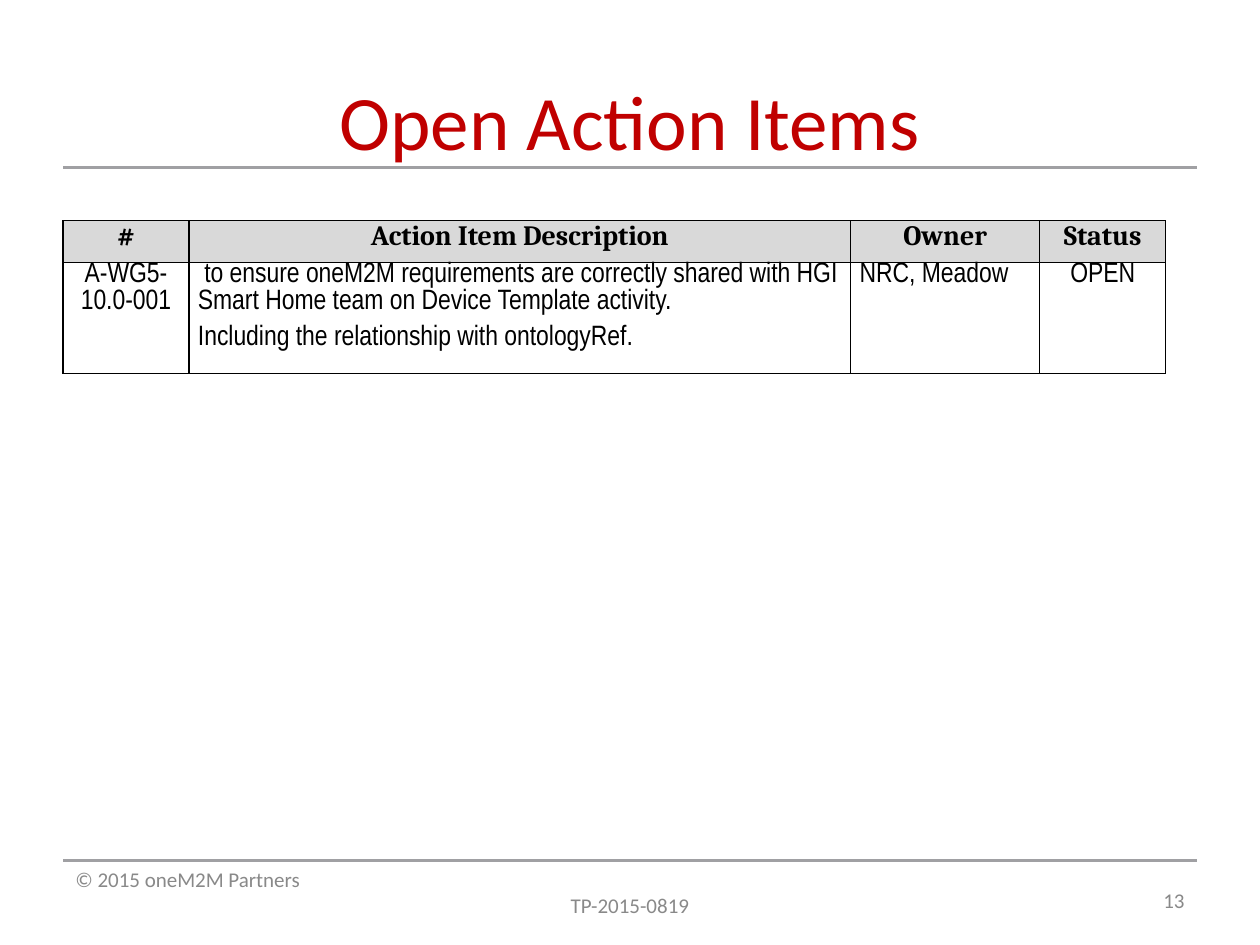
from dataclasses import dataclass

from lxml import etree
from pptx import Presentation
from pptx import util as u
from pptx.dml.color import RGBColor
from pptx.enum import shapes, text
from pptx.oxml import ns

RED = RGBColor(0xC0, 0x00, 0x00)
RULE_GREY = RGBColor(0xA0, 0xA0, 0xA3)
FOOTER_GREY = RGBColor(0x89, 0x89, 0x89)
HEADER_FILL = RGBColor(0xD9, 0xD9, 0xD9)
BLACK = RGBColor(0x00, 0x00, 0x00)

LEFT, CONTENT_WIDTH = u.Cm(1.27), u.Cm(22.86)
TITLE_RULE_TOP, FOOTER_TOP = u.Cm(3.38), u.Cm(17.35)
ALIGN = text.PP_ALIGN


@dataclass(frozen=True)
class Column:
    heading: str
    width: float
    entry: tuple[str, ...]
    align: text.PP_ALIGN


COLUMNS = (
    Column("#", 2.54, ("A-WG5-10.0-001",), ALIGN.CENTER),
    Column(
        "Action Item Description",
        13.34,
        (
            " to ensure oneM2M requirements are correctly shared with HGI "
            "Smart Home team on Device Template activity.",
            "Including the relationship with ontologyRef.",
        ),
        ALIGN.LEFT,
    ),
    Column("Owner", 3.81, ("NRC, Meadow",), ALIGN.LEFT),
    Column("Status", 2.54, ("OPEN",), ALIGN.CENTER),
)


def write(frame, *lines: str, aligns=(ALIGN.LEFT,), font="Calibri", size=12,
          color=FOOTER_GREY, bold=False, gap=0, after=0) -> None:
    """Fill a text frame; the last alignment holds for the remaining lines."""
    frame.word_wrap = True
    for index, line in enumerate(lines):
        paragraph = frame.add_paragraph() if index else frame.paragraphs[0]
        paragraph.alignment = aligns[min(index, len(aligns) - 1)]
        paragraph.space_before = u.Pt(gap if index else 0)
        paragraph.space_after = u.Pt(after)
        run = paragraph.add_run()
        run.text = line
        run.font.name, run.font.size = font, u.Pt(size)
        run.font.bold = bold
        run.font.color.rgb = color


def add_rule(slide, top: int) -> None:
    rule = slide.shapes.add_connector(
        shapes.MSO_CONNECTOR.STRAIGHT, LEFT, top, LEFT + CONTENT_WIDTH, top)
    rule.line.color.rgb = RULE_GREY
    rule.line.width = u.Pt(1.75)
    etree.SubElement(rule._element.spPr, ns.qn("a:effectLst"))


def add_borders(cell) -> None:
    properties = cell._tc.get_or_add_tcPr()
    for side in ("lnL", "lnR", "lnT", "lnB"):
        border = etree.SubElement(properties, ns.qn(f"a:{side}"), w=str(u.Pt(1)))
        fill = etree.SubElement(border, ns.qn("a:solidFill"))
        etree.SubElement(fill, ns.qn("a:srgbClr"), val=str(BLACK))


def format_cell(cell, fill: RGBColor | None) -> None:
    cell.margin_left = cell.margin_right = u.Cm(0.18)
    cell.margin_top = cell.margin_bottom = 0
    add_borders(cell)
    if fill is None:
        cell.fill.background()
    else:
        cell.fill.solid()
        cell.fill.fore_color.rgb = fill


def add_action_items(slide) -> None:
    width = u.Cm(sum(column.width for column in COLUMNS))
    table = slide.shapes.add_table(
        2, len(COLUMNS), LEFT, u.Cm(4.45), width, u.Cm(2.64)).table
    table.rows[0].height, table.rows[1].height = u.Cm(0.84), u.Cm(1.8)
    for index, column in enumerate(COLUMNS):
        table.columns[index].width = u.Cm(column.width)
        heading, entry = table.cell(0, index), table.cell(1, index)
        format_cell(heading, HEADER_FILL)
        format_cell(entry, None)
        write(heading.text_frame, column.heading, aligns=(ALIGN.CENTER,),
              font="Cambria", size=16, color=BLACK, bold=True, after=3)
        write(entry.text_frame, *column.entry, aligns=(column.align,),
              font="Arial Narrow", size=16, color=BLACK, gap=6)


def add_title(slide) -> None:
    title = slide.shapes.title
    title.left, title.top = LEFT, u.Cm(1.27)
    title.width, title.height = CONTENT_WIDTH, u.Cm(3.18)
    frame = title.text_frame
    frame.auto_size = text.MSO_AUTO_SIZE.NONE
    frame.vertical_anchor = text.MSO_ANCHOR.TOP
    frame.margin_top = u.Cm(0.22)
    write(frame, "Open Action Items", aligns=(ALIGN.CENTER,), size=44, color=RED)


def add_footer(slide) -> None:
    footer = slide.shapes.add_textbox(LEFT, FOOTER_TOP, CONTENT_WIDTH, u.Cm(1.3))
    write(footer.text_frame, "© 2015 oneM2M Partners", "TP-2015-0819",
          aligns=(ALIGN.LEFT, ALIGN.CENTER))
    number = slide.shapes.add_textbox(
        u.Cm(18.2), u.Cm(17.65), u.Cm(5.93), u.Cm(1.01))
    number.text_frame.vertical_anchor = text.MSO_ANCHOR.MIDDLE
    write(number.text_frame, "13", aligns=(ALIGN.RIGHT,))


def main() -> None:
    deck = Presentation()
    deck.slide_width, deck.slide_height = u.Cm(25.4), u.Cm(19.05)
    slide = deck.slides.add_slide(deck.slide_layouts.get_by_name("Title Only"))
    for top in (FOOTER_TOP, TITLE_RULE_TOP):
        add_rule(slide, top)
    add_footer(slide)
    add_title(slide)
    add_action_items(slide)
    deck.save("out.pptx")


if __name__ == "__main__":
    main()
